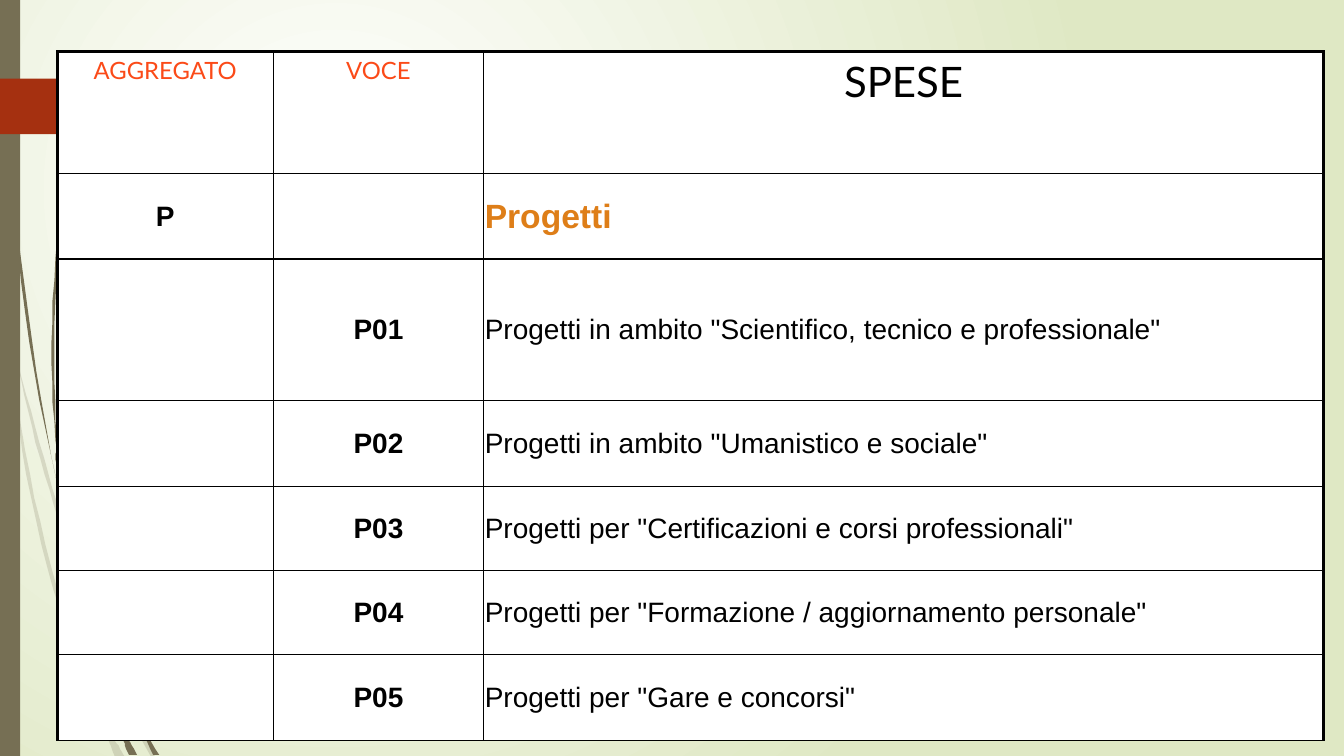
from dataclasses import dataclass
from math import pi, sin

from lxml.etree import SubElement
from pptx import Presentation
from pptx.dml.color import RGBColor
from pptx.dml.fill import FillFormat
from pptx.enum.shapes import MSO_SHAPE
from pptx.enum.text import MSO_ANCHOR, PP_ALIGN
from pptx.oxml.ns import qn
from pptx.shapes.autoshape import Shape
from pptx.slide import Slide
from pptx.table import _Cell
from pptx.text.text import TextFrame
from pptx.util import Pt

OLIVE = "766F54"
RED = "A53010"
BLACK = "000000"
WHITE = "FFFFFF"
ORANGE = "DE7E18"
HUNDREDTH_INCH = Pt(0.72)
CURVE_STEPS = 16
THIN, THICK = 1, 2.25


@dataclass
class Wisp:
    start: tuple[int, int]
    middle: tuple[int, int]
    end: tuple[int, int]
    width: int
    widens: bool = False
    opacity: int = 100


@dataclass
class Entry:
    aggregate: str
    code: str
    description: str
    height: float


WISPS = [
    Wisp((14, 345), (46, 470), (85, 590), 4, opacity=20),
    Wisp((88, 600), (117, 678), (152, 751), 5, widens=True, opacity=20),
    Wisp((11, 350), (43, 540), (101, 714), 4, opacity=20),
    Wisp((101, 711), (109, 730), (119, 751), 10, widens=True, opacity=20),
    Wisp((3, 0), (19, 250), (57, 481), 3),
    Wisp((110, 641), (130, 697), (155, 749), 5, widens=True),
    Wisp((70, 141), (53, 320), (60, 472), 3),
    Wisp((117, 715), (124, 732), (132, 749), 9, widens=True),
    Wisp((55, 449), (59, 477), (64, 505), 3),
]

COLUMN_WIDTHS = [154.1, 150.5, 599.8]
HEADER_HEIGHT = 87.1
ENTRIES = [
    Entry("P", "", "Progetti", 61.2),
    Entry("", "P01", 'Progetti in ambito "Scientifico, tecnico e professionale"', 100.8),
    Entry("", "P02", 'Progetti in ambito "Umanistico e sociale"', 61.9),
    Entry("", "P03", 'Progetti per "Certificazioni e corsi professionali"', 59.8),
    Entry("", "P04", 'Progetti per "Formazione / aggiornamento personale"', 59.8),
    Entry("", "P05", 'Progetti per "Gare e concorsi"', 61.9),
]


def paint(fill: FillFormat, color: str) -> None:
    fill.solid()
    fill.fore_color.rgb = RGBColor.from_string(color)


def style_shape(shape: Shape, color: str) -> None:
    paint(shape.fill, color)
    shape.line.fill.background()
    shape.shadow.inherit = False


def outline_wisp(wisp: Wisp) -> list[tuple[float, float]]:
    left, right = [], []
    for step in range(CURVE_STEPS + 1):
        t = step / CURVE_STEPS
        weights = ((1 - t) * (1 - 2 * t), 4 * t * (1 - t), t * (2 * t - 1))
        knots = (wisp.start, wisp.middle, wisp.end)
        x, y = (sum(w * knot[axis] for w, knot in zip(weights, knots)) for axis in (0, 1))
        half = wisp.width / 2 * (t if wisp.widens else sin(pi * t))
        left.append((x - half, y))
        right.append((x + half, y))
    return left + right[::-1]


def draw_wisp(slide: Slide, wisp: Wisp) -> None:
    first, *others = outline_wisp(wisp)
    builder = slide.shapes.build_freeform(*first, scale=HUNDREDTH_INCH)
    builder.add_line_segments(others, close=True)
    shape = builder.convert_to_shape()
    style_shape(shape, OLIVE)
    if wisp.opacity < 100:
        color = shape.element.spPr.find(qn("a:solidFill")).find(qn("a:srgbClr"))
        SubElement(color, qn("a:alpha"), val=str(wisp.opacity * 1000))


def draw_background(slide: Slide) -> None:
    fill = slide.background.fill
    fill.gradient()
    for stop, color in zip(fill.gradient_stops, (WHITE, "DFE8C4")):
        stop.color.rgb = RGBColor.from_string(color)
    gradient = slide.element.find(".//" + qn("a:gradFill"))
    gradient.remove(gradient.find(qn("a:lin")))
    circle = SubElement(gradient, qn("a:path"), path="circle")
    SubElement(circle, qn("a:fillToRect"), l="50000", t="50000", r="100000", b="100000")


def write_text(frame: TextFrame, text: str, *, size: float, color: str = BLACK, font: str = "Arial",
               bold: bool = False, align: PP_ALIGN = PP_ALIGN.LEFT, space_before: float = 0) -> None:
    paragraph = frame.paragraphs[0]
    paragraph.alignment = align
    paragraph.space_before = Pt(space_before)
    run = paragraph.add_run()
    run.text = text
    run.font.size = Pt(size)
    run.font.name = font
    run.font.bold = bold
    run.font.color.rgb = RGBColor.from_string(color)


def set_borders(cell: _Cell, **widths: float) -> None:
    properties = cell._tc.get_or_add_tcPr()
    for index, (side, width) in enumerate(widths.items()):
        line = SubElement(properties, qn(f"a:ln{side}"), w=str(Pt(width)))
        SubElement(SubElement(line, qn("a:solidFill")), qn("a:srgbClr"), val=BLACK)
        properties.insert(index, line)


def draw_table(slide: Slide) -> None:
    heights = [HEADER_HEIGHT] + [entry.height for entry in ENTRIES]
    frame = slide.shapes.add_table(len(heights), len(COLUMN_WIDTHS), Pt(41), Pt(36.7),
                                   Pt(sum(COLUMN_WIDTHS)), Pt(sum(heights)))
    table = frame.table
    table.first_row = table.horz_banding = False
    for column, width in zip(table.columns, COLUMN_WIDTHS):
        column.width = Pt(width)
    for row, height in zip(table.rows, heights):
        row.height = Pt(height)
        for index, cell in enumerate(row.cells):
            paint(cell.fill, WHITE)
            set_borders(cell, L=THICK if index == 0 else THIN, R=THICK if index == 2 else THIN,
                        T=THICK if height == HEADER_HEIGHT else THIN, B=THIN)
    headers = [("AGGREGATO", 17, "FB4A18"), ("VOCE", 17, "FB4A18"), ("SPESE", 30, BLACK)]
    for cell, (text, size, color) in zip(table.rows[0].cells, headers):
        write_text(cell.text_frame, text, size=size, color=color, font="Lato",
                   align=PP_ALIGN.CENTER, space_before=size * 0.2)
    for number, entry in enumerate(ENTRIES, start=1):
        for index, text in enumerate((entry.aggregate, entry.code, entry.description)):
            if not text:
                continue
            cell = table.cell(number, index)
            cell.vertical_anchor = MSO_ANCHOR.MIDDLE
            cell.margin_left = cell.margin_right = cell.margin_top = Pt(0.72)
            cell.margin_bottom = Pt(0)
            title = index == 2 and bool(entry.aggregate)
            write_text(cell.text_frame, text, size=24 if title else 20,
                       color=ORANGE if title else BLACK, bold=title or index < 2,
                       align=PP_ALIGN.LEFT if index == 2 else PP_ALIGN.CENTER)


def main() -> None:
    presentation = Presentation()
    presentation.slide_width, presentation.slide_height = Pt(960), Pt(540)
    slide = presentation.slides.add_slide(presentation.slide_layouts[6])
    draw_background(slide)
    for wisp in WISPS:
        draw_wisp(slide, wisp)
    side_bar = slide.shapes.add_shape(MSO_SHAPE.RECTANGLE, Pt(0), Pt(0), Pt(14.4), Pt(540))
    style_shape(side_bar, OLIVE)
    tab = slide.shapes.add_shape(MSO_SHAPE.PENTAGON, Pt(0), Pt(56.2), Pt(125.3), Pt(39.6))
    tab.adjustments[0] = 0.47
    style_shape(tab, RED)
    draw_table(slide)
    presentation.save("out.pptx")


if __name__ == "__main__":
    main()
